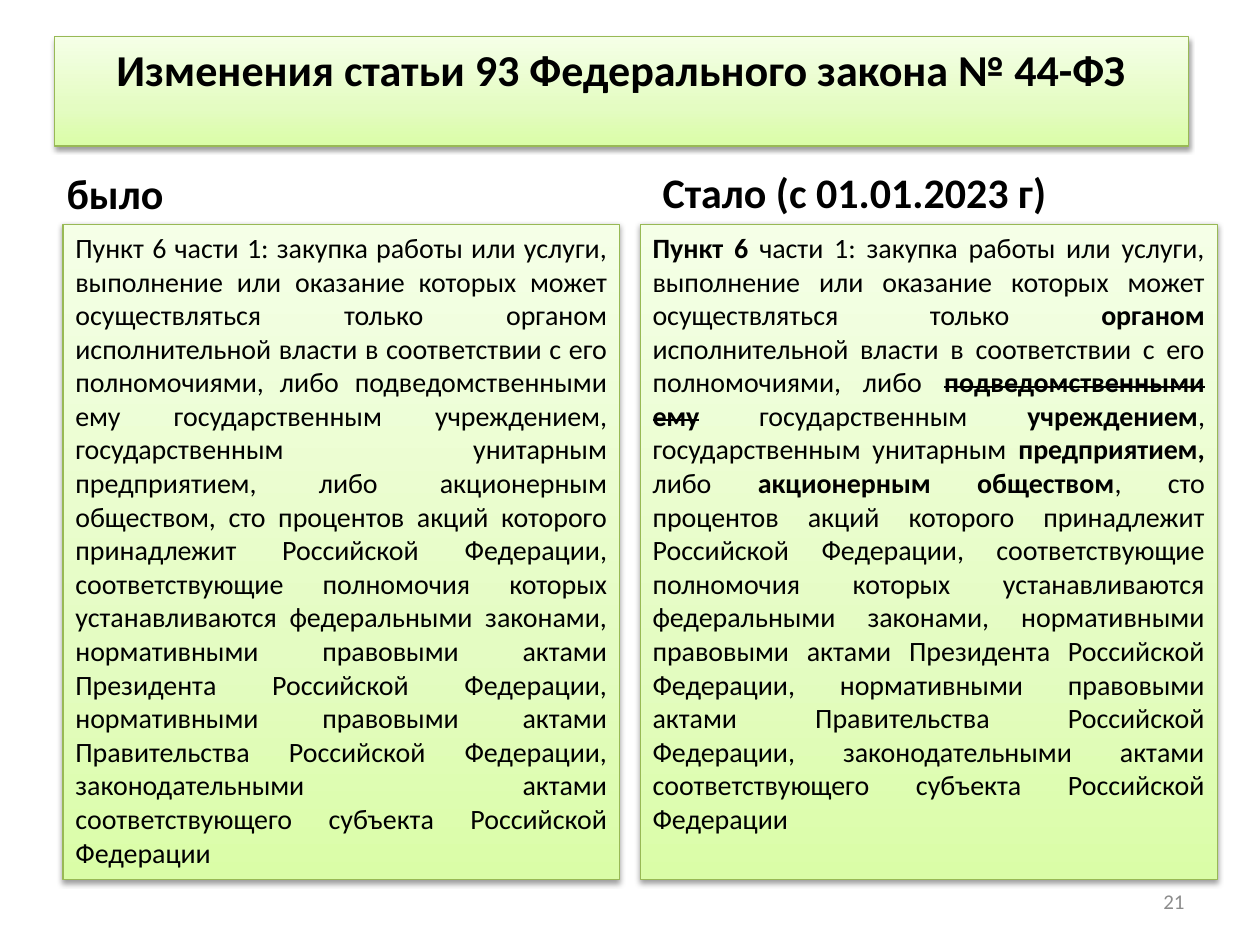
from copy import deepcopy
from dataclasses import dataclass

from pptx import Presentation
from pptx.dml.color import RGBColor
from pptx.enum.shapes import MSO_SHAPE
from pptx.enum.text import MSO_ANCHOR, PP_ALIGN
from pptx.oxml import parse_xml
from pptx.oxml.ns import nsdecls, qn
from pptx.util import Pt

RECTANGLE = MSO_SHAPE.RECTANGLE
TOP, MIDDLE, BOTTOM = MSO_ANCHOR.TOP, MSO_ANCHOR.MIDDLE, MSO_ANCHOR.BOTTOM
LEFT, CENTER, RIGHT, JUSTIFY = PP_ALIGN.LEFT, PP_ALIGN.CENTER, PP_ALIGN.RIGHT, PP_ALIGN.JUSTIFY


@dataclass(frozen=True)
class Theme:
    font: str = "Calibri"
    ink: str = "000000"
    muted: str = "8C8C8C"
    border: str = "98B955"
    gradient: tuple = ((0, "DAFDA7"), (0.35, "E4FCC2"), (1, "F5FFE7"))
    title: float = 25.2
    heading: float = 24
    body: float = 16
    leading: float = 19.2
    number: float = 12


theme = Theme()

SHADOW = (
    f'<a:effectLst {nsdecls("a")}><a:outerShdw blurRad="{Pt(3.1)}" dist="{Pt(1.6)}" '
    'dir="5400000" rotWithShape="0"><a:srgbClr val="000000"><a:alpha val="38000"/>'
    "</a:srgbClr></a:outerShdw></a:effectLst>"
)


def write(box, spans, *, size, color=theme.ink, align=LEFT, anchor=TOP, leading=None):
    frame = box.text_frame
    frame.word_wrap = True
    frame.vertical_anchor = anchor
    para = frame.paragraphs[0]
    para.alignment = align
    if leading:
        para.line_spacing = Pt(leading)
    for text, style in spans:
        span = para.add_run()
        span.text = text
        span.font.name = theme.font
        span.font.size = Pt(size)
        span.font.bold = style != "plain"
        span.font.color.rgb = RGBColor.from_string(color)
        if style == "struck":
            span.font._element.set("strike", "sngStrike")


def add_panel(page, left, top, width, height):
    panel = page.shapes.add_shape(RECTANGLE, Pt(left), Pt(top), Pt(width), Pt(height))
    panel.fill.gradient()
    panel.fill.gradient_angle = 90
    properties = panel._element.spPr
    first_stop = properties.find(".//" + qn("a:gs"))
    first_stop.addnext(deepcopy(first_stop))
    for stop, (position, color) in zip(panel.fill.gradient_stops, theme.gradient):
        stop.position = position
        stop.color.rgb = RGBColor.from_string(color)
    panel.line.color.rgb = RGBColor.from_string(theme.border)
    panel.line.width = Pt(0.75)
    properties.append(parse_xml(SHADOW))
    return panel


new_wording = [
    ("Пункт 6 ", "bold"),
    ("части 1: закупка работы или услуги, выполнение или оказание которых может "
     "осуществляться только ", "plain"),
    ("органом", "bold"),
    (" исполнительной власти в соответствии с его полномочиями, либо ", "plain"),
    ("подведомственными ему", "struck"),
    (" государственным ", "plain"),
    ("учреждением", "bold"),
    (", государственным унитарным ", "plain"),
    ("предприятием, ", "bold"),
    ("либо ", "plain"),
    ("акционерным обществом", "bold"),
    (", сто процентов акций которого принадлежит Российской Федерации, соответствующие "
     "полномочия которых устанавливаются федеральными законами, нормативными правовыми "
     "актами Президента Российской Федерации, нормативными правовыми актами Правительства "
     "Российской Федерации, законодательными актами соответствующего субъекта Российской "
     "Федерации", "plain"),
]
old_wording = [("".join(text for text, style in new_wording), "plain")]

deck = Presentation()
deck.slide_width, deck.slide_height = Pt(720), Pt(540)
page = deck.slides.add_slide(deck.slide_layouts[6])

title = add_panel(page, 31, 20.9, 648, 62.6)
write(title, [("Изменения статьи 93 Федерального закона № 44-ФЗ", "bold")],
      size=theme.title, align=CENTER)

columns = [
    ("было", (31, 77, 334.8, 51.1), old_wording, (36, 318.2)),
    ("Стало (с 01.01.2023 г)", (371.5, 77, 318.2, 50.4), new_wording, (365.8, 329.8)),
]
for heading, bounds, wording, (left, width) in columns:
    box = page.shapes.add_textbox(*map(Pt, bounds))
    write(box, [(heading, "bold")], size=theme.heading, anchor=BOTTOM)
    panel = add_panel(page, left, 128.2, width, 374.4)
    write(panel, wording, size=theme.body, align=JUSTIFY, leading=theme.leading)

number = page.shapes.add_textbox(Pt(516.2), Pt(500.4), Pt(167.8), Pt(28.8))
write(number, [("21", "plain")], size=theme.number, color=theme.muted,
      align=RIGHT, anchor=MIDDLE)

deck.save("out.pptx")
